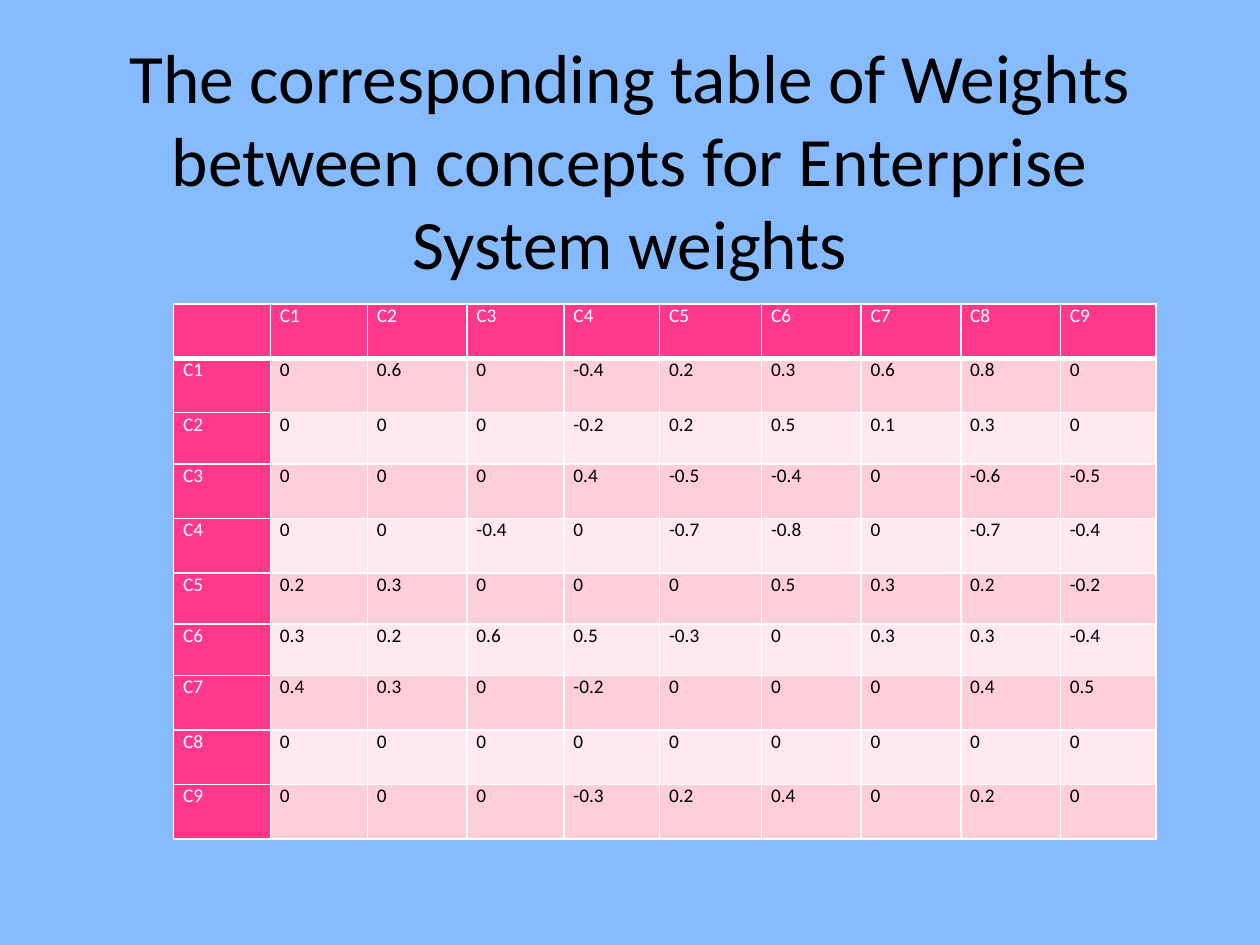
from pptx import Presentation
from pptx.dml.color import RGBColor
from pptx.enum.text import MSO_ANCHOR, PP_ALIGN
from pptx.oxml.ns import qn
from pptx.util import Pt
from lxml import etree

CENTER, JUSTIFY = PP_ALIGN.CENTER, PP_ALIGN.JUSTIFY
MIDDLE = MSO_ANCHOR.MIDDLE

TITLE = "The corresponding table of Weights between concepts for Enterprise System weights"
CONCEPTS = [f"C{number}" for number in range(1, 10)]
WEIGHTS = [
    [0, 0.6, 0, -0.4, 0.2, 0.3, 0.6, 0.8, 0],
    [0, 0, 0, -0.2, 0.2, 0.5, 0.1, 0.3, 0],
    [0, 0, 0, 0.4, -0.5, -0.4, 0, -0.6, -0.5],
    [0, 0, -0.4, 0, -0.7, -0.8, 0, -0.7, -0.4],
    [0.2, 0.3, 0, 0, 0, 0.5, 0.3, 0.2, -0.2],
    [0.3, 0.2, 0.6, 0.5, -0.3, 0, 0.3, 0.3, -0.4],
    [0.4, 0.3, 0, -0.2, 0, 0, 0, 0.4, 0.5],
    [0, 0, 0, 0, 0, 0, 0, 0, 0],
    [0, 0, 0, -0.3, 0.2, 0.4, 0, 0.2, 0],
]
ROWS = [["", *CONCEPTS]] + [[name, *row] for name, row in zip(CONCEPTS, WEIGHTS)]

COLORS = {
    "background": "87BBFF",
    "header": "FF388C",
    "odd": "FFCEDA",
    "even": "FFE8EE",
    "light": "FFFFFF",
    "dark": "000000",
}
FONT = "Calibri"
COLUMN_WIDTHS = [55.4, 55.4, 56.9, 55.4, 54.7, 58.3, 56.9, 56.9, 56.9, 54.7]
TALL, SHORT = 31.15, 29.3
ROW_HEIGHTS = [TALL, TALL, SHORT, TALL, TALL, SHORT, SHORT, TALL, TALL, TALL]


def color(name):
    return RGBColor.from_string(COLORS[name])


def style_font(para, size, color_name):
    para.font.name = FONT
    para.font.size = Pt(size)
    para.font.bold = False
    para.font.color.rgb = color(color_name)


def add_borders(cell, bottom_width):
    """Draw white 1 pt borders, with a chosen width at the bottom."""
    properties = cell._tc.get_or_add_tcPr()
    widths = {"a:lnL": 1, "a:lnR": 1, "a:lnT": 1, "a:lnB": bottom_width}
    for position, (tag, width) in enumerate(widths.items()):
        line = etree.Element(qn(tag), w=str(Pt(width)))
        fill = etree.SubElement(line, qn("a:solidFill"))
        etree.SubElement(fill, qn("a:srgbClr"), val=COLORS["light"])
        properties.insert(position, line)


def add_title(slide):
    box = slide.shapes.add_textbox(Pt(36), Pt(21.6), Pt(648), Pt(90))
    frame = box.text_frame
    frame.word_wrap = True
    frame.vertical_anchor = MIDDLE
    frame.margin_top, frame.margin_bottom = Pt(48), Pt(0)
    para = frame.paragraphs[0]
    para.text = TITLE
    para.alignment = CENTER
    style_font(para, 39.6, "dark")


def fill_cell(cell, value, row, column):
    is_header = row == 0 or column == 0
    band = "odd" if row % 2 else "even"
    cell.fill.solid()
    cell.fill.fore_color.rgb = color("header" if is_header else band)
    cell.margin_left = cell.margin_right = Pt(5.4)
    cell.margin_top = cell.margin_bottom = Pt(0)
    para = cell.text_frame.paragraphs[0]
    para.text = str(value)
    para.alignment = JUSTIFY
    style_font(para, 11, "light" if is_header else "dark")
    add_borders(cell, 3 if row == 0 else 1)


def add_weight_table(slide):
    table = slide.shapes.add_table(
        len(ROWS), len(COLUMN_WIDTHS), Pt(99.2), Pt(173.6),
        Pt(sum(COLUMN_WIDTHS)), Pt(sum(ROW_HEIGHTS)),
    ).table
    table.first_col = True
    for column, width in zip(table.columns, COLUMN_WIDTHS):
        column.width = Pt(width)
    for row, height in zip(table.rows, ROW_HEIGHTS):
        row.height = Pt(height)
    for r, values in enumerate(ROWS):
        for c, value in enumerate(values):
            fill_cell(table.cell(r, c), value, r, c)


def main():
    deck = Presentation()
    deck.slide_width, deck.slide_height = Pt(720), Pt(540)
    slide = deck.slides.add_slide(deck.slide_layouts[6])
    slide.background.fill.solid()
    slide.background.fill.fore_color.rgb = color("background")
    add_title(slide)
    add_weight_table(slide)
    deck.save("out.pptx")


if __name__ == "__main__":
    main()
